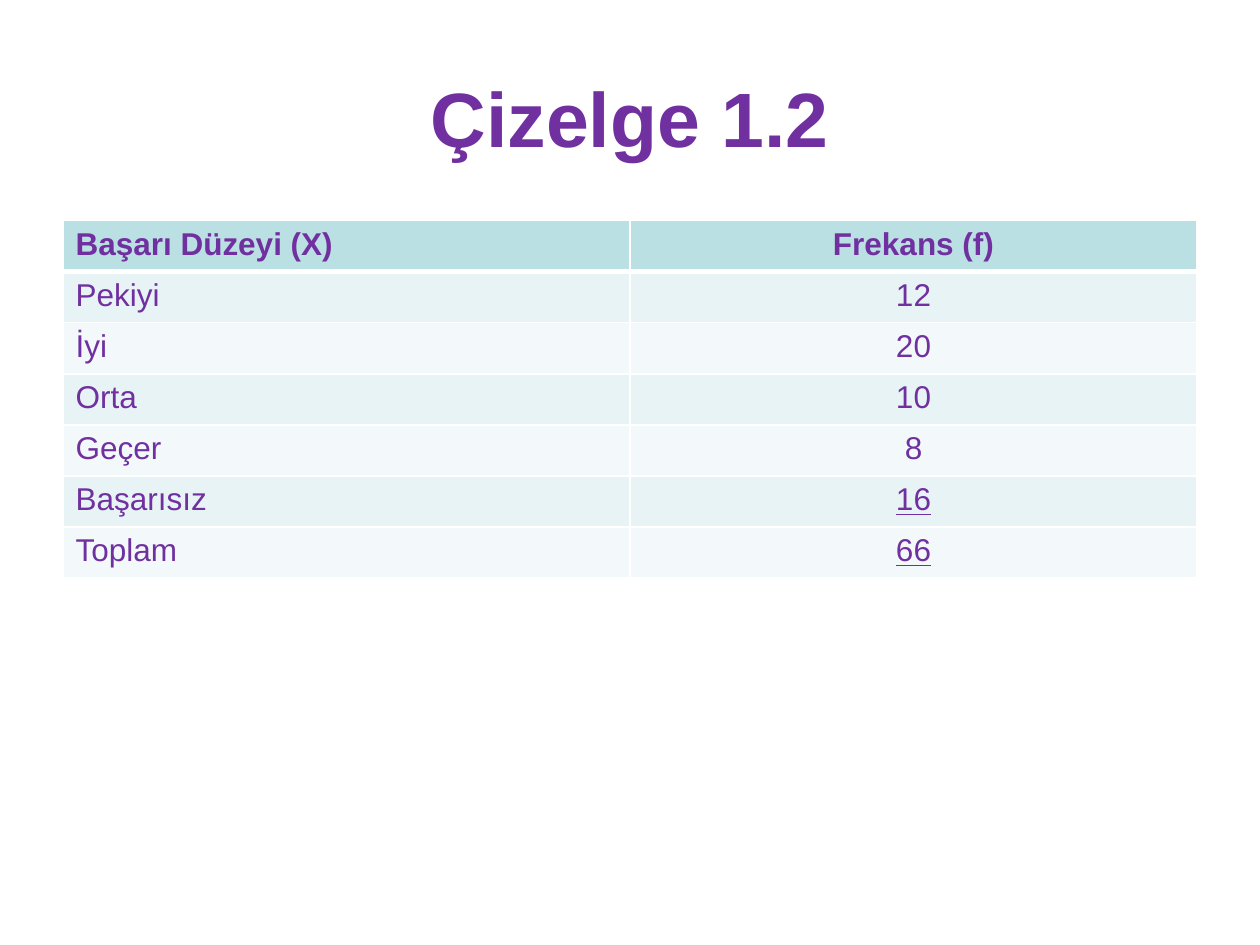
from dataclasses import dataclass

import pptx
import pptx.dml.color
import pptx.enum.text
import pptx.oxml
import pptx.oxml.ns
import pptx.util

PURPLE, WHITE = "7030A0", "FFFFFF"
HEADER_FILL, BAND_FILLS = "BBE0E3", ("E7F3F4", "F3F9FA")
WIDTH, HEIGHT = pptx.util.Inches(10), pptx.util.Inches(7.5)
MARGIN = 0.05  # share of the slide width
ALIGN = pptx.enum.text.PP_ALIGN
ANCHOR = pptx.enum.text.MSO_ANCHOR


@dataclass
class Row:
    level: str
    frequency: str
    underline: bool = False
    header: bool = False


ROWS = [
    Row("Başarı Düzeyi (X)", "Frekans (f)", header=True),
    Row("Pekiyi", "12"),
    Row("İyi", "20"),
    Row("Orta", "10"),
    Row("Geçer", "8"),
    Row("Başarısız", "16", underline=True),
    Row("Toplam", "66", underline=True),
]


def rgb(color: str) -> pptx.dml.color.RGBColor:
    return pptx.dml.color.RGBColor.from_string(color)


def write(tf, text: str, align, **font) -> None:
    p = tf.paragraphs[0]
    p.alignment = align
    r = p.add_run()
    r.text = text
    r.font.color.rgb = rgb(PURPLE)
    for name, value in {"name": "Arial", **font}.items():
        setattr(r.font, name, value)


def set_borders(cell, top: float, bottom: float) -> None:
    widths = {"lnL": 1, "lnR": 1, "lnT": top, "lnB": bottom}
    tc_pr = cell._tc.get_or_add_tcPr()
    for i, (side, width) in enumerate(widths.items()):
        # Border lines come before the fill in the cell properties
        tc_pr.insert(i, pptx.oxml.parse_xml(
            f'<a:{side} {pptx.oxml.ns.nsdecls("a")} w="{pptx.util.Pt(width)}">'
            f'<a:solidFill><a:srgbClr val="{WHITE}"/></a:solidFill></a:{side}>'))


def add_title(s, text: str) -> None:
    title = s.shapes.title
    box = {"left": MARGIN * WIDTH, "top": 0.04 * HEIGHT,
           "width": (1 - 2 * MARGIN) * WIDTH, "height": HEIGHT / 6}
    for name, value in box.items():
        setattr(title, name, int(value))
    title.text_frame.vertical_anchor = ANCHOR.MIDDLE
    write(title.text_frame, text, ALIGN.CENTER, size=pptx.util.Pt(44), bold=True)


def add_frequency_table(s, rows: list[Row]) -> None:
    table = s.shapes.add_table(
        len(rows), 2, int(MARGIN * WIDTH), pptx.util.Inches(1.75),
        int((1 - 2 * MARGIN) * WIDTH), pptx.util.Inches(2.84)).table
    for i, row in enumerate(rows):
        fill = HEADER_FILL if row.header else BAND_FILLS[(i - 1) % 2]
        columns = ((row.level, ALIGN.LEFT, False),
                   (row.frequency, ALIGN.CENTER, row.underline))
        for j, (text, align, underline) in enumerate(columns):
            cell = table.cell(i, j)
            cell.fill.solid()
            cell.fill.fore_color.rgb = rgb(fill)
            set_borders(cell, top=3 if i == 1 else 1, bottom=3 if row.header else 1)
            write(cell.text_frame, text, align, size=pptx.util.Pt(18),
                  bold=row.header, underline=underline)


def main() -> None:
    prs = pptx.Presentation()
    prs.slide_width, prs.slide_height = WIDTH, HEIGHT
    s = prs.slides.add_slide(prs.slide_layouts[5])  # title only
    s.background.fill.solid()
    s.background.fill.fore_color.rgb = rgb(WHITE)
    add_title(s, "Çizelge 1.2")
    add_frequency_table(s, ROWS)
    prs.save("out.pptx")


if __name__ == "__main__":
    main()
